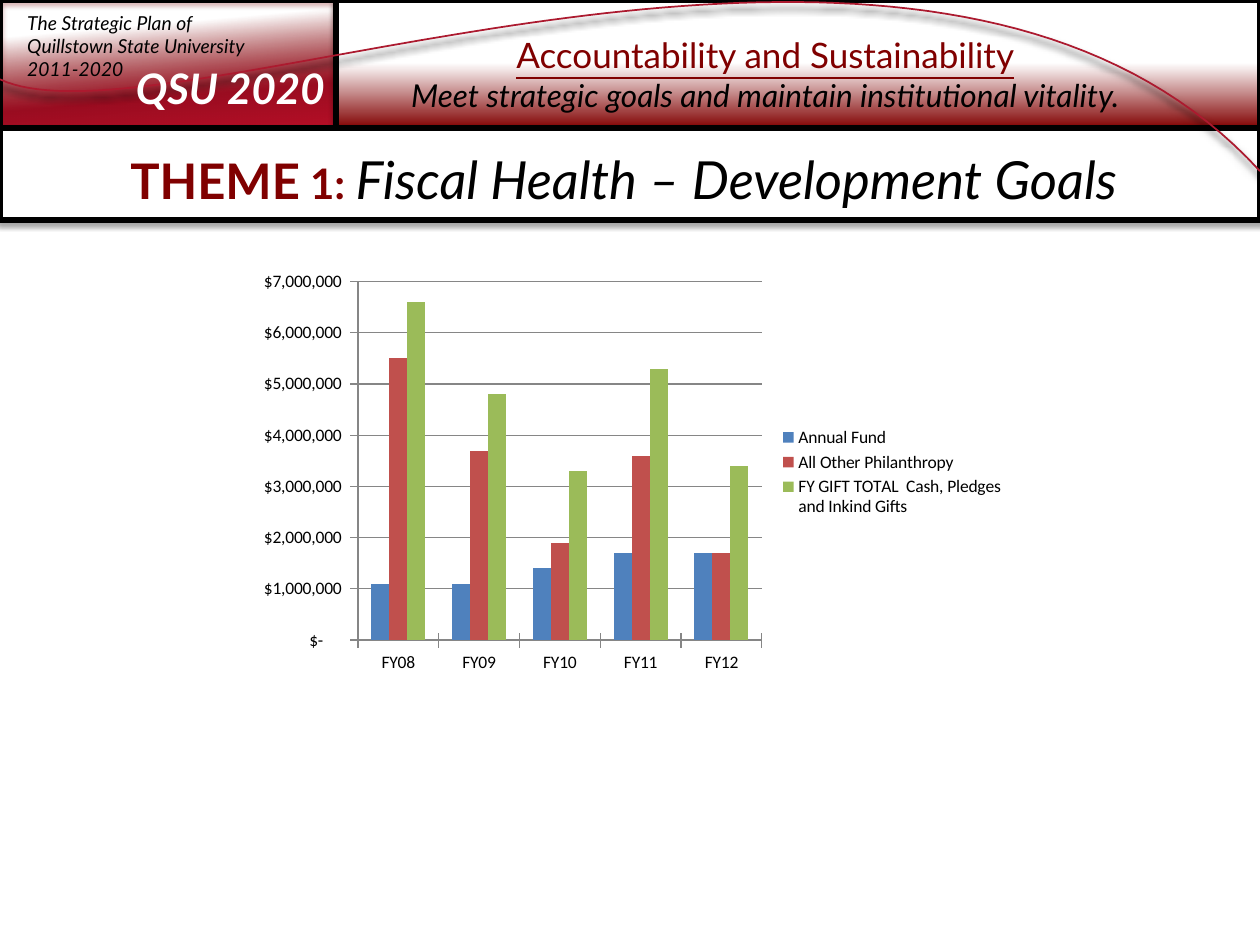
from dataclasses import dataclass

from lxml import etree
from pptx import Presentation
from pptx.chart.data import CategoryChartData
from pptx.dml.color import RGBColor
from pptx.enum.chart import XL_CHART_TYPE, XL_LEGEND_POSITION, XL_TICK_MARK
from pptx.enum.shapes import MSO_SHAPE
from pptx.enum.text import MSO_ANCHOR, MSO_AUTO_SIZE, PP_ALIGN
from pptx.oxml import parse_xml
from pptx.util import Cm, Pt

RECT = MSO_SHAPE.RECTANGLE
COLUMN = XL_CHART_TYPE.COLUMN_CLUSTERED
RIGHT = XL_LEGEND_POSITION.RIGHT
CROSS = XL_TICK_MARK.CROSS
TOP = MSO_ANCHOR.TOP
FIXED = MSO_AUTO_SIZE.NONE
LEFT, CENTER = PP_ALIGN.LEFT, PP_ALIGN.CENTER
NS = "http://schemas.openxmlformats.org/drawingml/2006/main"

COLORS = {
    "black": "000000",
    "white": "FFFFFF",
    "maroon": "800000",
    "crimson": "9A0D21",
    "red": "B70F27",
    "curve": "AC1A2F",
    "grid": "868686",
    "blue": "4F81BD",
    "brick": "C0504D",
    "green": "9BBB59",
}


@dataclass
class Stop:
    pos: int
    color: str
    alpha: int = 100


@dataclass
class Panel:
    box: tuple
    stops: tuple
    angle: int = 0
    shade: str = "black"


@dataclass
class Series:
    name: str
    color: str
    values: tuple


PANELS = (
    Panel((0, 0, 6.78, 2.59),
          (Stop(24, "maroon", 0), Stop(71, "crimson"), Stop(100, "red")), 85, "maroon"),
    Panel((6.78, 0, 18.62, 2.59), (Stop(0, "maroon"), Stop(51, "white")), 270),
    Panel((0, 2.59, 25.4, 1.85), (Stop(0, "white"),)),
)
CURVE = ((25.4, 3.45), (18.69, -3.91), (3.38, 3.18), (0, 1.6))
STEPS = 80
YEARS = ("FY08", "FY09", "FY10", "FY11", "FY12")
GIFTS = (
    Series("Annual Fund", "blue", (1.1e6, 1.1e6, 1.4e6, 1.7e6, 1.7e6)),
    Series("All Other Philanthropy", "brick", (5.5e6, 3.7e6, 1.9e6, 3.6e6, 1.7e6)),
    Series("FY GIFT TOTAL  Cash, Pledges and Inkind Gifts", "green",
           (6.6e6, 4.8e6, 3.3e6, 5.3e6, 3.4e6)),
)
MONEY = '_("$"* #,##0_);_("$"* \\(#,##0\\);_("$"* "-"??_);_(@_)'


def rgb(name: str) -> RGBColor:
    return RGBColor.from_string(COLORS[name])


def place(box: tuple) -> list:
    return [Cm(side) for side in box]


def add_shade(shape, color: str, alpha: int, blur: float, dist: float) -> None:
    shape.shadow.inherit = False
    effects = shape.element.spPr.find(f"{{{NS}}}effectLst")
    shade = etree.SubElement(effects, f"{{{NS}}}outerShdw", blurRad=str(Pt(blur)),
                             dist=str(Pt(dist)), dir="5400000", rotWithShape="0")
    tint = etree.SubElement(shade, f"{{{NS}}}srgbClr", val=COLORS[color])
    etree.SubElement(tint, f"{{{NS}}}alpha", val=str(alpha * 1000))


def set_blend(shape, stops: tuple, angle: int) -> None:
    marks = "".join(
        f'<a:gs pos="{s.pos * 1000}"><a:srgbClr val="{COLORS[s.color]}">'
        f'<a:alpha val="{s.alpha * 1000}"/></a:srgbClr></a:gs>' for s in stops)
    blend = parse_xml(f'<a:gradFill xmlns:a="{NS}" rotWithShape="1"><a:gsLst>{marks}</a:gsLst>'
                      f'<a:lin ang="{angle * 60000}" scaled="0"/></a:gradFill>')
    shape.element.spPr.find(f"{{{NS}}}prstGeom").addnext(blend)


def add_panel(slide, panel: Panel) -> None:
    shape = slide.shapes.add_shape(RECT, *place(panel.box))
    if len(panel.stops) > 1:
        set_blend(shape, panel.stops, panel.angle)
    else:
        shape.fill.solid()
        shape.fill.fore_color.rgb = rgb(panel.stops[0].color)
    shape.line.color.rgb = rgb("black")
    shape.line.width = Pt(3.5)
    add_shade(shape, panel.shade, 35, 3.1, 1.8)


def add_curve(slide) -> None:
    points = []
    for step in range(STEPS + 1):
        t = step / STEPS
        parts = ((1 - t) ** 3, 3 * t * (1 - t) ** 2, 3 * t * t * (1 - t), t ** 3)
        points.append(tuple(Cm(sum(w * p[axis] for w, p in zip(parts, CURVE)))
                            for axis in (0, 1)))
    pen = slide.shapes.build_freeform(*points[0])
    pen.add_line_segments(points[1:], close=False)
    shape = pen.convert_to_shape()
    shape.fill.background()
    shape.line.color.rgb = rgb("curve")
    shape.line.width = Pt(1)
    add_shade(shape, "black", 90, 4, 3)


def write(par, text: str, size: int, color: str = "black", align=LEFT,
          bold: bool = False, italic: bool = False, under: bool = False) -> None:
    par.alignment = align
    run = par.add_run()
    run.text = text
    font = run.font
    font.name, font.size = "Lato", Pt(size)
    font.bold, font.italic, font.underline = bold, italic, under
    font.color.rgb = rgb(color)


def add_box(slide, box: tuple, *lines: tuple) -> None:
    frame = slide.shapes.add_textbox(*place(box)).text_frame
    frame.word_wrap = True
    for index, (text, style) in enumerate(lines):
        par = frame.add_paragraph() if index else frame.paragraphs[0]
        write(par, text, **style)


def set_title(slide) -> None:
    title = slide.shapes.title
    title.left, title.top, title.width, title.height = place((0, 2.84, 25.4, 1.55))
    frame = title.text_frame
    frame.vertical_anchor, frame.auto_size, frame.word_wrap = TOP, FIXED, True
    par = frame.paragraphs[0]
    write(par, "THEME", 28, "maroon", CENTER, bold=True)
    write(par, " 1: ", 24, "maroon", CENTER, bold=True)
    write(par, "Fiscal Health – Development Goals ", 30, align=CENTER, italic=True)
    title.element.getparent().append(title.element)


def add_gifts(slide) -> None:
    data = CategoryChartData(number_format=MONEY)
    data.categories = YEARS
    for gift in GIFTS:
        data.add_series(gift.name, gift.values)
    chart = slide.shapes.add_chart(COLUMN, *place((4.93, 5.31, 15.57, 8.41)), data).chart
    chart.font.name, chart.font.size = "Calibri", Pt(10)
    chart.font.color.rgb = rgb("black")
    chart.has_title = False
    chart.has_legend = True
    chart.legend.position = RIGHT
    chart.legend.include_in_layout = False
    plot = chart.plots[0]
    plot.gap_width, plot.overlap, plot.vary_by_categories = 150, 0, False
    for series, gift in zip(plot.series, GIFTS):
        series.format.fill.solid()
        series.format.fill.fore_color.rgb = rgb(gift.color)
    scale = chart.value_axis
    scale.minimum_scale, scale.maximum_scale, scale.major_unit = 0, 7e6, 1e6
    scale.has_major_gridlines = True
    scale.tick_labels.number_format = MONEY
    scale.tick_labels.number_format_is_linked = False
    for axis in (chart.category_axis, scale):
        axis.major_tick_mark = CROSS
        axis.format.line.color.rgb = rgb("grid")
    scale.major_gridlines.format.line.color.rgb = rgb("grid")


def main() -> None:
    deck = Presentation()
    deck.slide_width, deck.slide_height = Cm(25.4), Cm(19.05)
    slide = deck.slides.add_slide(deck.slide_layouts[5])
    for panel in PANELS:
        add_panel(slide, panel)
    add_curve(slide)
    small = dict(size=11, italic=True)
    add_box(slide, (0.3, 0.1, 8.1, 1.68), ("The Strategic Plan of", small),
            ("Quillstown State University", small), ("2011-2020", small))
    add_box(slide, (6.12, 0.56, 18.62, 1.88),
            ("Accountability and Sustainability",
             dict(size=20, color="maroon", align=CENTER, under=True)),
            ("Meet strategic goals and maintain institutional vitality.",
             dict(size=18, align=CENTER, italic=True)))
    add_box(slide, (2.49, 1.14, 4.42, 1.27),
            ("QSU 2020", dict(size=24, color="white", bold=True, italic=True)))
    set_title(slide)
    add_gifts(slide)
    deck.save("out.pptx")


if __name__ == "__main__":
    main()
